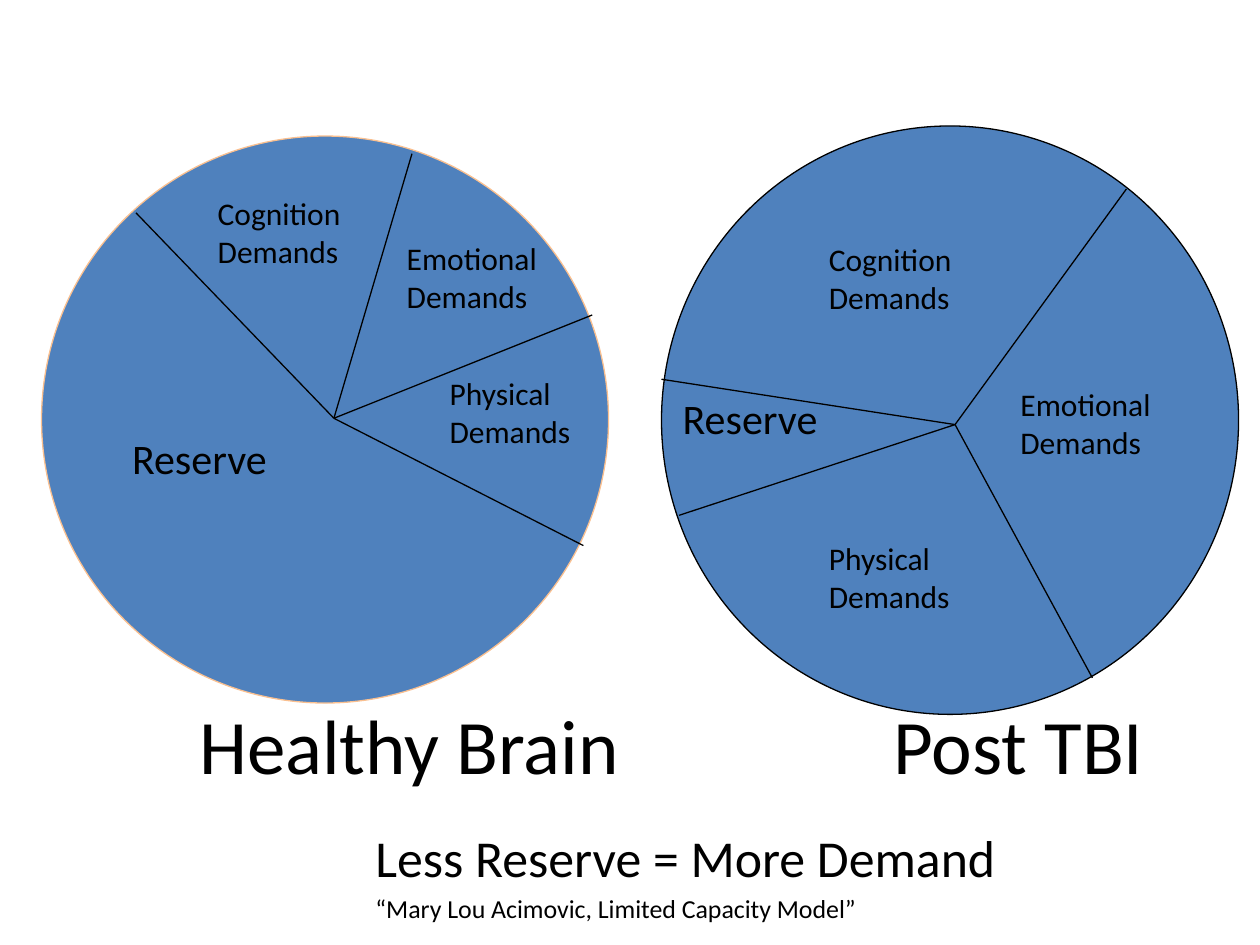
from lxml import etree
from pptx import Presentation
from pptx import util as u
from pptx.dml.color import RGBColor
from pptx.enum import shapes, text
from pptx.oxml.ns import qn

BLACK = RGBColor(0x00, 0x00, 0x00)
BLUE = RGBColor(0x4F, 0x81, 0xBD)
PEACH = RGBColor(0xFA, 0xC0, 0x90)
FONT = "Calibri"
HAIRLINE = u.Pt(0.75)

TITLES = ("Healthy Brain", "Post TBI")
TITLE_INSET, TITLE_TAB = 1.08, 5.51
FOOTER = (("Less Reserve = More Demand", 29.6),
          ("“Mary Lou Acimovic, Limited Capacity Model”", 14.8))

# Boxes are left, top, width, height in inches; labels are text, size, box.
BRAINS = (
    {"box": (0.33, 1.08, 4.5, 4.5), "outline": PEACH, "hub": (2.65, 3.32),
     "rim": ((1.08, 1.69), (3.27, 1.22), (4.7, 2.5), (4.63, 4.33)),
     "labels": (("Reserve", 24, (0.95, 3.38, 1.84, 0.47)),
                ("Cognition\nDemands", 18, (1.63, 1.49, 1.3, 0.65)),
                ("Emotional\nDemands", 18, (3.13, 1.85, 1.26, 0.65)),
                ("Physical\nDemands", 18, (3.47, 2.92, 1.43, 0.65)))},
    {"box": (5.25, 1, 4.58, 4.67), "outline": BLACK, "hub": (7.58, 3.37),
     "rim": ((5.25, 3.01), (8.94, 1.5), (8.67, 5.38), (5.39, 4.09)),
     "labels": (("Reserve", 24, (5.32, 3.07, 1.85, 0.47)),
                ("Cognition\nDemands", 18, (6.48, 1.86, 1.3, 0.66)),
                ("Emotional\nDemands", 18, (8, 3.01, 1.42, 0.66)),
                ("Physical\nDemands", 18, (6.48, 4.23, 1.44, 0.66)))},
)


def inches(values):
    return [u.Inches(value) for value in values]


def place(shape, box):
    shape.left, shape.top, shape.width, shape.height = inches(box)


def write(paragraph, words, size):
    """Add left-aligned words, breaking the line at each newline."""
    paragraph.alignment = text.PP_ALIGN.LEFT
    for number, line in enumerate(words.split("\n")):
        if number:
            paragraph.add_line_break()
        run = paragraph.add_run()
        run.text = line
        run.font.name, run.font.size = FONT, u.Pt(size)
        run.font.color.rgb = BLACK


def add_divider(group, start, end):
    line = group.shapes.add_connector(
        shapes.MSO_CONNECTOR.STRAIGHT, *inches(start + end))
    line.line.color.rgb, line.line.width = BLACK, HAIRLINE
    etree.SubElement(line._element.spPr, qn("a:effectLst"))


def add_label(group, words, size, box):
    label = group.shapes.add_textbox(*inches(box))
    label.text_frame.word_wrap = True
    write(label.text_frame.paragraphs[0], words, size)


def add_brain(slide, brain):
    group = slide.shapes.add_group_shape()
    circle = group.shapes.add_shape(
        shapes.MSO_SHAPE.OVAL, *inches(brain["box"]))
    circle.shadow.inherit = False
    circle.fill.solid()
    circle.fill.fore_color.rgb = BLUE
    circle.line.color.rgb, circle.line.width = brain["outline"], HAIRLINE
    for point in brain["rim"]:
        add_divider(group, brain["hub"], point)
    for label in brain["labels"]:
        add_label(group, *label)


def add_title(slide):
    title = slide.shapes.title
    place(title, (0.5, 5.31, 9.5, 1.19))
    frame = title.text_frame
    frame.auto_size = text.MSO_AUTO_SIZE.NONE
    frame.vertical_anchor = text.MSO_ANCHOR.MIDDLE
    frame.margin_left = u.Inches(TITLE_INSET)
    paragraph = frame.paragraphs[0]
    tabs = etree.SubElement(paragraph._p.get_or_add_pPr(), qn("a:tabLst"))
    etree.SubElement(tabs, qn("a:tab"),
                     pos=str(u.Inches(TITLE_TAB)), algn="l")
    write(paragraph, "\t".join(TITLES), 44)


def add_footer(slide):
    subtitle = slide.placeholders[1]
    place(subtitle, (2.88, 6.5, 7.12, 0.87))
    frame = subtitle.text_frame
    frame.auto_size = text.MSO_AUTO_SIZE.NONE
    for number, (words, size) in enumerate(FOOTER):
        paragraph = frame.add_paragraph() if number else frame.paragraphs[0]
        paragraph.space_before = u.Pt(3 * number)
        write(paragraph, words, size)


def main():
    presentation = Presentation()
    presentation.slide_width, presentation.slide_height = inches((10, 7.5))
    # The title slide layout holds both a title and a subtitle.
    slide = presentation.slides.add_slide(presentation.slide_layouts[0])
    add_footer(slide)
    add_title(slide)
    for brain in BRAINS:
        add_brain(slide, brain)
    presentation.save("out.pptx")


if __name__ == "__main__":
    main()
